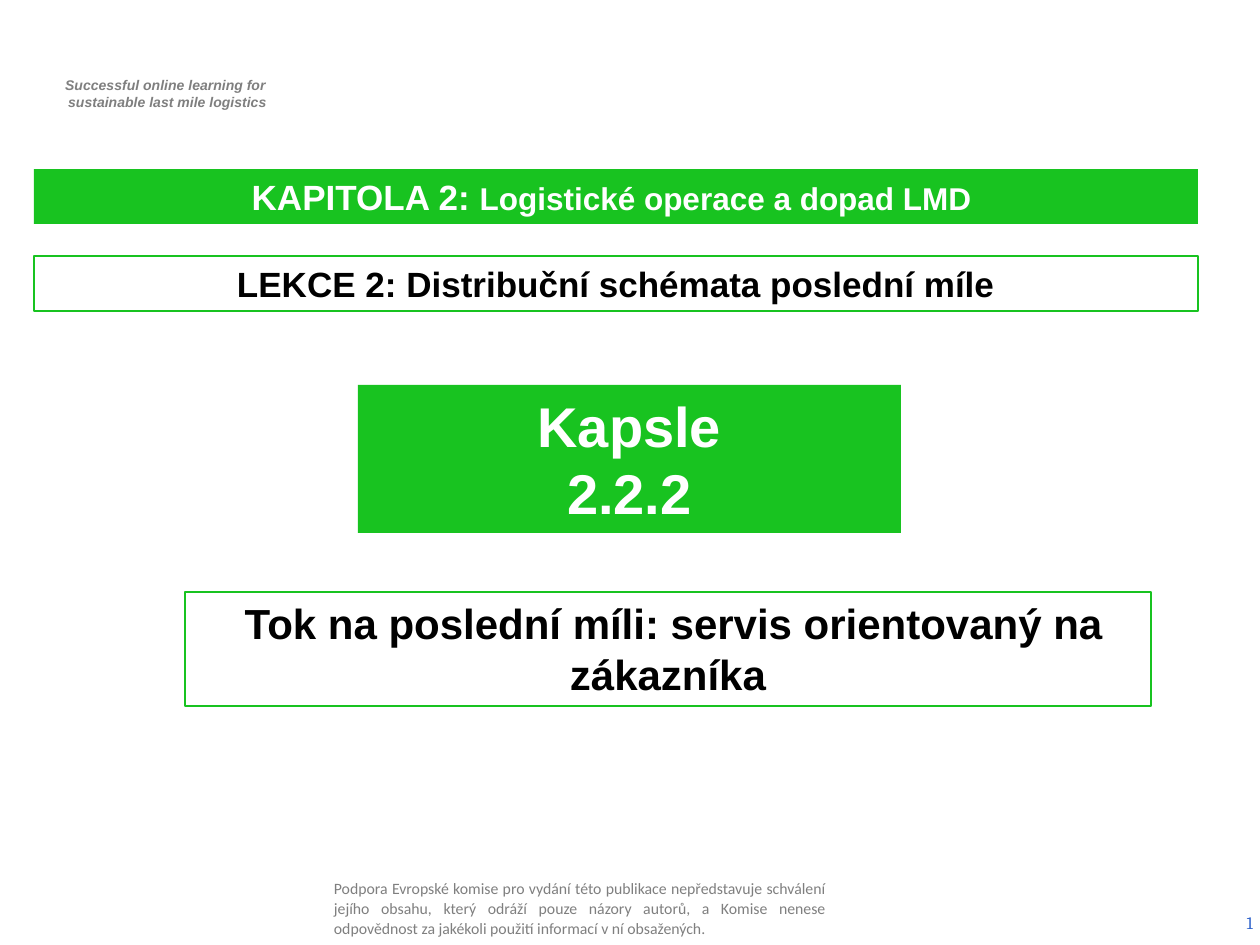
from pptx import Presentation
from pptx.dml.color import RGBColor
from pptx.enum.shapes import MSO_SHAPE as Shape
from pptx.enum.text import MSO_ANCHOR as Anchor, MSO_AUTO_SIZE as AutoSize, PP_ALIGN as Align
from pptx.util import Emu, Pt

EMU_PER_PX = 914400 / 126
COLORS = {"green": "18C320", "white": "FFFFFF", "black": "000000",
          "grey": "7F7F7F", "blue": "3366CC"}


def px(length):
    return Emu(round(length * EMU_PER_PX))


def rgb(name):
    return RGBColor.from_string(COLORS[name])


class LessonCover:
    def __init__(self, page):
        self.page = page

    def fill_text(self, box, paragraphs, size, color, font="Arial", bold=True, italic=False,
                  align=Align.CENTER, anchor=Anchor.TOP, insets=(12, 6)):
        """Each paragraph is a list of (text, own size or None) spans."""
        frame = box.text_frame
        frame.word_wrap = True
        frame.auto_size = AutoSize.NONE
        frame.vertical_anchor = anchor
        frame.margin_left = frame.margin_right = px(insets[0])
        frame.margin_top = frame.margin_bottom = px(insets[1])
        for index, spans in enumerate(paragraphs):
            para = frame.add_paragraph() if index else frame.paragraphs[0]
            para.alignment = align
            para.font.name, para.font.size = font, Pt(size)
            para.font.bold, para.font.italic = bold, italic
            para.font.color.rgb = rgb(color)
            for text, own_size in spans:
                span = para.add_run()
                span.text = text
                if own_size:
                    span.font.size = Pt(own_size)
        return frame.paragraphs

    def title(self, place, spans, size):
        box = self.page.shapes.title
        box.left, box.top, box.width, box.height = map(px, place)
        box.fill.solid()
        box.fill.fore_color.rgb = rgb("green")
        self.fill_text(box, [spans], size, "white")

    def text(self, place, lines, size, color, **style):
        box = self.page.shapes.add_textbox(*map(px, place))
        return self.fill_text(box, [[(line, None)] for line in lines], size, color, **style)

    def panel(self, place, lines, size, outline=None):
        """Green panel with white text, or a green outline with black text."""
        box = self.page.shapes.add_shape(Shape.RECTANGLE, *map(px, place))
        box.shadow.inherit = False
        if outline:
            box.fill.background()
            box.line.color.rgb = rgb("green")
            box.line.width = Pt(outline)
        else:
            box.fill.solid()
            box.fill.fore_color.rgb = rgb("green")
            box.line.fill.background()
        self.fill_text(box, [[(line, None)] for line in lines], size,
                       "black" if outline else "white")


def main():
    deck = Presentation()
    deck.slide_width, deck.slide_height = px(1260), px(945)
    cover = LessonCover(deck.slides.add_slide(deck.slide_layouts[5]))

    # Project motto
    motto = cover.text((37, 71, 256, 47),
                       ["Successful online learning for ", "sustainable last mile logistics"],
                       8, "grey", italic=True)
    for para in motto:
        para._p.get_or_add_pPr().set("marL", str(px(5)))

    # Chapter and lesson
    cover.title((34, 169, 1164, 55),
                [("KAPITOLA 2: ", None), ("Logistické operace a dopad LMD ", 18)], 20)
    cover.panel((34, 256, 1164, 55), ["LEKCE 2: Distribuční schémata poslední míle"],
                20, outline=0.75)

    # Capsule number and topic
    cover.panel((358, 385, 543, 148), ["Kapsle", "2.2.2"], 32)
    cover.panel((185, 592, 966, 114),
                [" Tok na poslední míli: servis orientovaný na zákazníka"], 24, outline=1.5)

    # Disclaimer and page number
    disclaimer = cover.text(
        (329, 876, 501, 63),
        ["Podpora Evropské komise pro vydání této publikace nepředstavuje schválení jejího "
         "obsahu, který odráží pouze názory autorů, a Komise nenese odpovědnost za jakékoli "
         "použití informací v ní obsažených."],
        9, "grey", font="Calibri", bold=False, align=Align.JUSTIFY,
        anchor=Anchor.MIDDLE, insets=(5, 5))
    disclaimer[0].line_spacing = 1.07
    disclaimer[0].space_after = Pt(6)
    cover.text((971, 898, 294, 50), ["1"], 10, "blue", font="Cambria", bold=False,
               align=Align.RIGHT, anchor=Anchor.MIDDLE)

    deck.save("out.pptx")


if __name__ == "__main__":
    main()
